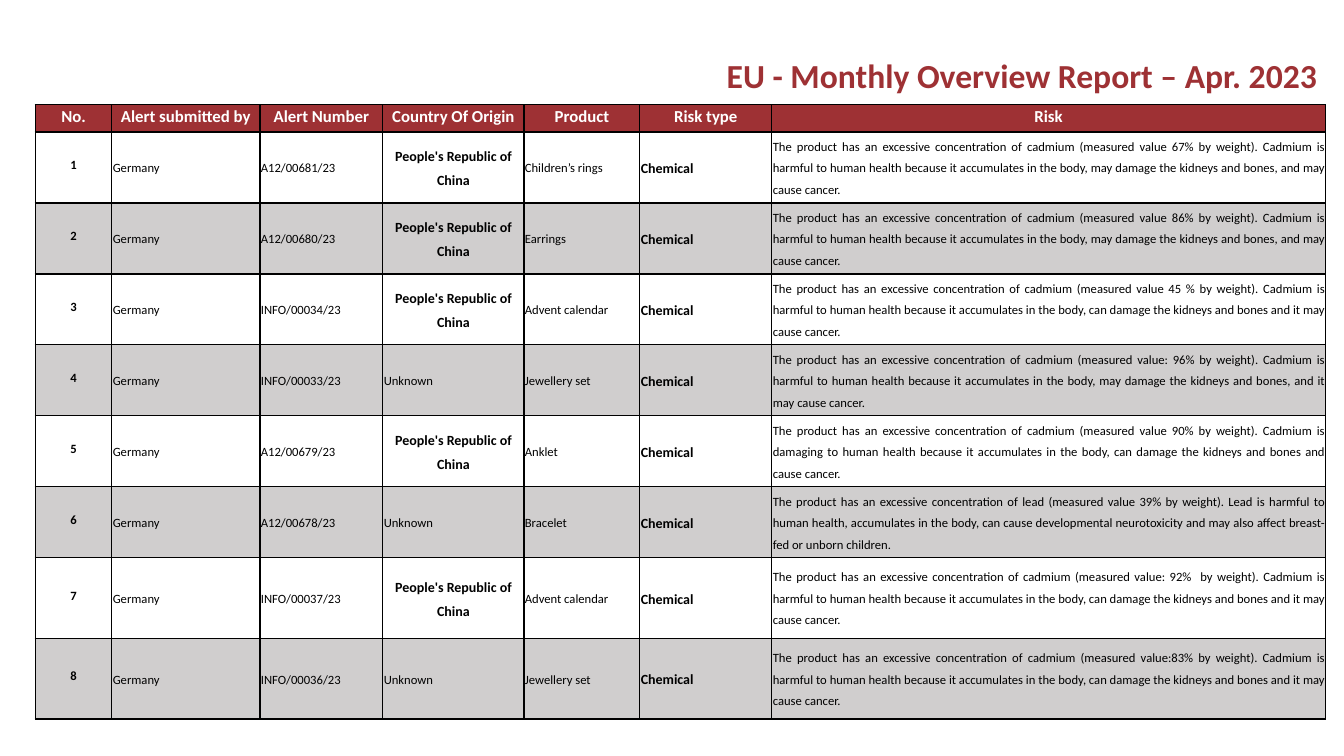
from lxml.etree import SubElement
from pptx import Presentation
from pptx.dml.color import RGBColor
from pptx.enum.text import MSO_ANCHOR as Anchor, MSO_AUTO_SIZE as AutoSize, PP_ALIGN as Align
from pptx.oxml.ns import qn
from pptx.util import Pt

RED, GREY, WHITE, BLACK = "9E3134", "D0CECE", "FFFFFF", "000000"


def color(hex_code):
    return RGBColor.from_string(hex_code)


def write(frame, text, size=9, bold=False, ink=BLACK, align=Align.LEFT, spacing=None):
    para = frame.paragraphs[0]
    para.alignment = align
    if spacing:
        para.line_spacing = spacing
    span = para.add_run()
    span.text = text
    span.font.name = "Calibri"
    span.font.size = Pt(size)
    span.font.bold = bold
    span.font.color.rgb = color(ink)


headers = ["No.", "Alert submitted by", "Alert Number", "Country Of Origin",
           "Product", "Risk type", "Risk"]
column_widths = [54.7, 105.8, 87.8, 100.8, 82.8, 94.3, 395.3]
row_heights = [19.4] + [50.7] * 6 + [57.6] * 2

cadmium = ("The product has an excessive concentration of cadmium (measured value{}% by weight). "
           "Cadmium is {} to human health because it accumulates in the body, {} cause cancer.")
lead = ("The product has an excessive concentration of lead (measured value 39% by weight). "
        "Lead is harmful to human health, accumulates in the body, can cause developmental "
        "neurotoxicity and may also affect breast-fed or unborn children.")
may_damage = "may damage the kidneys and bones, and"
can_damage = "can damage the kidneys and bones and"
china = "People's Republic of China"
unknown = "Unknown"

alerts = [
    ("A12/00681/23", china, "Children’s rings",
     cadmium.format(" 67", "harmful", may_damage + " may")),
    ("A12/00680/23", china, "Earrings",
     cadmium.format(" 86", "harmful", may_damage + " may")),
    ("INFO/00034/23", china, "Advent calendar",
     cadmium.format(" 45 ", "harmful", can_damage + " it may")),
    ("INFO/00033/23", unknown, "Jewellery set",
     cadmium.format(": 96", "harmful", may_damage + " it may")),
    ("A12/00679/23", china, "Anklet",
     cadmium.format(" 90", "damaging", can_damage)),
    ("A12/00678/23", unknown, "Bracelet", lead),
    ("INFO/00037/23", china, "Advent calendar",
     cadmium.format(": 92", "harmful", can_damage + " it may").replace("% by", "%  by")),
    ("INFO/00036/23", unknown, "Jewellery set",
     cadmium.format(":83", "harmful", can_damage + " it may")),
]
rows = [headers]
for number, (alert, origin, product, risk) in enumerate(alerts, start=1):
    rows.append([str(number), "Germany", alert, origin, product, "Chemical", risk])

deck = Presentation()
deck.slide_width, deck.slide_height = Pt(960), Pt(540)
page = deck.slides.add_slide(deck.slide_layouts[6])

title = page.shapes.add_textbox(Pt(512), Pt(36), Pt(438.5), Pt(36)).text_frame
title.word_wrap = False
title.auto_size = AutoSize.SHAPE_TO_FIT_TEXT
write(title, "EU - Monthly Overview Report – Apr. 2023", size=24, bold=True, ink=RED)

table = page.shapes.add_table(len(rows), len(headers), Pt(25.2), Pt(74.9),
                              Pt(sum(column_widths)), Pt(sum(row_heights))).table
table.first_row = table.horz_banding = False
for column, width in zip(table.columns, column_widths):
    column.width = Pt(width)
for row, height in zip(table.rows, row_heights):
    row.height = Pt(height)

for row_index, texts in enumerate(rows):
    for column_index, text in enumerate(texts):
        cell = table.cell(row_index, column_index)
        cell.margin_left = cell.margin_top = cell.margin_right = Pt(0.7)
        cell.margin_bottom = Pt(3.6)
        cell.vertical_anchor = Anchor.MIDDLE

        properties = cell._tc.get_or_add_tcPr()
        for side in ("a:lnL", "a:lnR", "a:lnT", "a:lnB"):
            border = SubElement(properties, qn(side), w=str(Pt(1)))
            border_fill = SubElement(border, qn("a:solidFill"))
            SubElement(border_fill, qn("a:srgbClr"), val=BLACK)

        cell.fill.solid()
        if row_index == 0:
            cell.fill.fore_color.rgb = color(RED)
            write(cell.text_frame, text, size=12, bold=True, ink=WHITE, align=Align.CENTER)
            continue
        cell.fill.fore_color.rgb = color(WHITE if row_index % 2 else GREY)
        if column_index == 0:
            write(cell.text_frame, text, bold=True, align=Align.CENTER)
        elif text == china:
            write(cell.text_frame, text, size=10, bold=True, align=Align.CENTER, spacing=1.4)
        elif text == "Chemical":
            write(cell.text_frame, text, size=10, bold=True, align=Align.JUSTIFY, spacing=1.4)
        else:
            write(cell.text_frame, text, align=Align.JUSTIFY, spacing=1.4)

deck.save("out.pptx")
